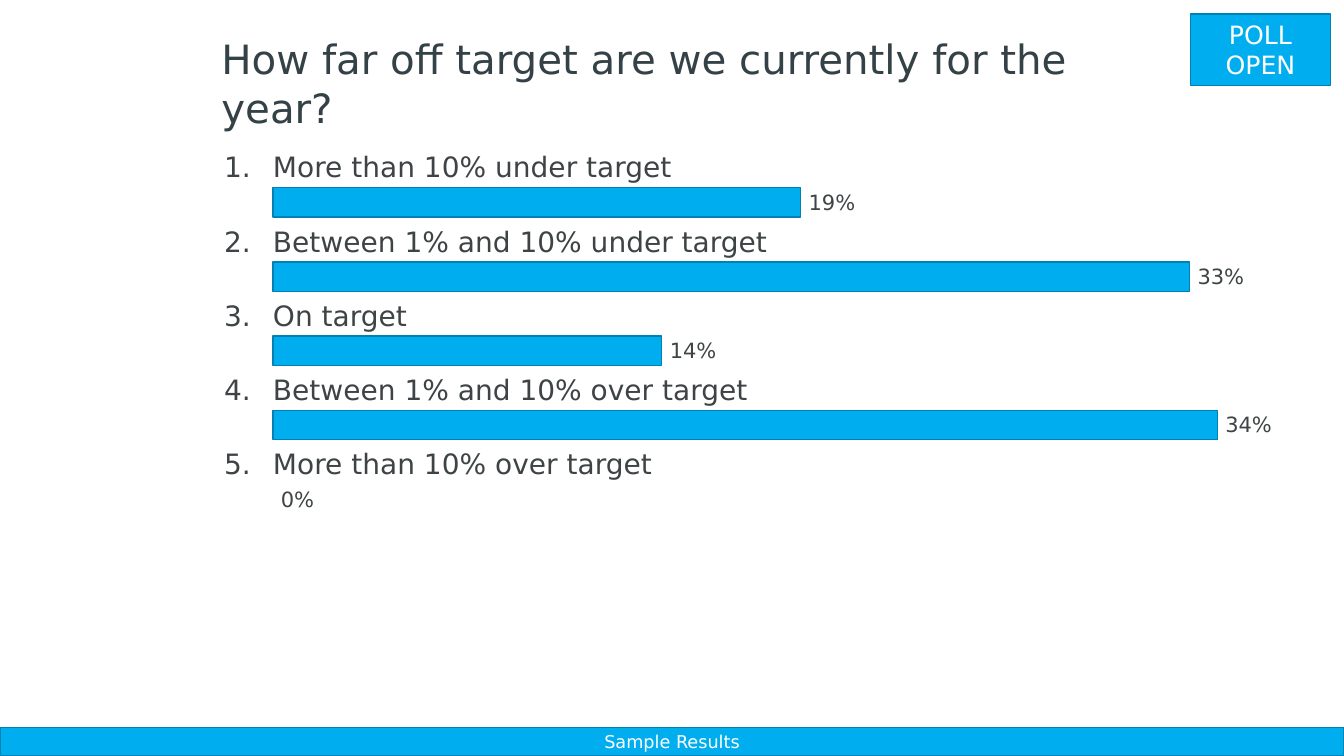
"""Build a poll results slide with one horizontal bar per answer."""
from dataclasses import dataclass

from pptx import Presentation
from pptx.dml.color import RGBColor
from pptx.enum.shapes import MSO_SHAPE
from pptx.enum.text import MSO_ANCHOR, PP_ALIGN
from pptx.shapes.autoshape import Shape
from pptx.slide import Slide
from pptx.util import Cm, Pt

COLORS = {
    "bar": "00AEEF",
    "outline": "0081B1",
    "title": "344146",
    "body": "3E4445",
    "light": "FFFFFF",
}
FONT = "DejaVu Sans"
SLIDE_WIDTH, SLIDE_HEIGHT = 33.87, 19.05
NUMBER_LEFT, ANSWER_LEFT = 5.33, 6.88
FIRST_TOP, ROW_PITCH = 3.63, 1.87
BAR_OFFSET, BAR_HEIGHT = 1.1, 0.74
CM_PER_PERCENT = 0.7
FOOTER_HEIGHT = 0.71


@dataclass(frozen=True)
class Box:
    left: float
    top: float
    width: float
    height: float


@dataclass(frozen=True)
class Answer:
    text: str
    percent: int


ANSWERS = [
    Answer("More than 10% under target", 19),
    Answer("Between 1% and 10% under target", 33),
    Answer("On target", 14),
    Answer("Between 1% and 10% over target", 34),
    Answer("More than 10% over target", 0),
]


def write(
    shape: Shape,
    text: str,
    *,
    size: float,
    color: str = "body",
    align: PP_ALIGN = PP_ALIGN.LEFT,
    anchor: MSO_ANCHOR = MSO_ANCHOR.TOP,
    insets: tuple[float, float, float, float] = (0.25, 0.13, 0.25, 0.13),
) -> None:
    frame = shape.text_frame
    frame.word_wrap = True
    frame.vertical_anchor = anchor
    frame.margin_left, frame.margin_top, frame.margin_right, frame.margin_bottom = map(Cm, insets)
    paragraph = frame.paragraphs[0]
    paragraph.alignment = align
    run = paragraph.add_run()
    run.text = text
    run.font.name = FONT
    run.font.size = Pt(size)
    run.font.color.rgb = RGBColor.from_string(COLORS[color])


def add_text_box(slide: Slide, box: Box) -> Shape:
    return slide.shapes.add_textbox(Cm(box.left), Cm(box.top), Cm(box.width), Cm(box.height))


def add_bar(slide: Slide, box: Box) -> Shape:
    shape = slide.shapes.add_shape(
        MSO_SHAPE.RECTANGLE, Cm(box.left), Cm(box.top), Cm(box.width), Cm(box.height)
    )
    shape.shadow.inherit = False
    shape.fill.solid()
    shape.fill.fore_color.rgb = RGBColor.from_string(COLORS["bar"])
    shape.line.color.rgb = RGBColor.from_string(COLORS["outline"])
    shape.line.width = Pt(1)
    return shape


def add_answer(slide: Slide, number: int, answer: Answer) -> None:
    top = FIRST_TOP + (number - 1) * ROW_PITCH
    bar_width = answer.percent * CM_PER_PERCENT
    number_box = add_text_box(slide, Box(NUMBER_LEFT, top, ANSWER_LEFT - NUMBER_LEFT, 1))
    write(number_box, f"{number}.", size=20, align=PP_ALIGN.RIGHT, insets=(0.25, 0.15, 0.56, 0))
    answer_box = add_text_box(slide, Box(ANSWER_LEFT, top, 25.6, 1.07))
    write(answer_box, answer.text, size=20, insets=(0, 0.15, 0, 0.08))
    percent_box = add_text_box(slide, Box(ANSWER_LEFT + bar_width, top + 1.14, 1.5, 0.64))
    write(percent_box, f"{answer.percent}%", size=15, insets=(0.2, 0, 0, 0))
    if answer.percent:
        add_bar(slide, Box(ANSWER_LEFT, top + BAR_OFFSET, bar_width, BAR_HEIGHT))


def main() -> None:
    presentation = Presentation()
    presentation.slide_width = Cm(SLIDE_WIDTH)
    presentation.slide_height = Cm(SLIDE_HEIGHT)
    slide = presentation.slides.add_slide(presentation.slide_layouts[6])

    footer = add_bar(slide, Box(0, SLIDE_HEIGHT - FOOTER_HEIGHT, SLIDE_WIDTH, FOOTER_HEIGHT))
    write(footer, "Sample Results", size=12.6, color="light",
          align=PP_ALIGN.CENTER, anchor=MSO_ANCHOR.MIDDLE)
    title = add_text_box(slide, Box(NUMBER_LEFT, 0.74, 24.18, 2.69))
    write(title, "How far off target are we currently for the year?", size=28.8, color="title")
    status = add_bar(slide, Box(30, 0.35, 3.53, 1.8))
    write(status, "POLL OPEN", size=18, color="light", align=PP_ALIGN.CENTER)

    for number, answer in enumerate(ANSWERS, start=1):
        add_answer(slide, number, answer)
    presentation.save("out.pptx")


if __name__ == "__main__":
    main()
